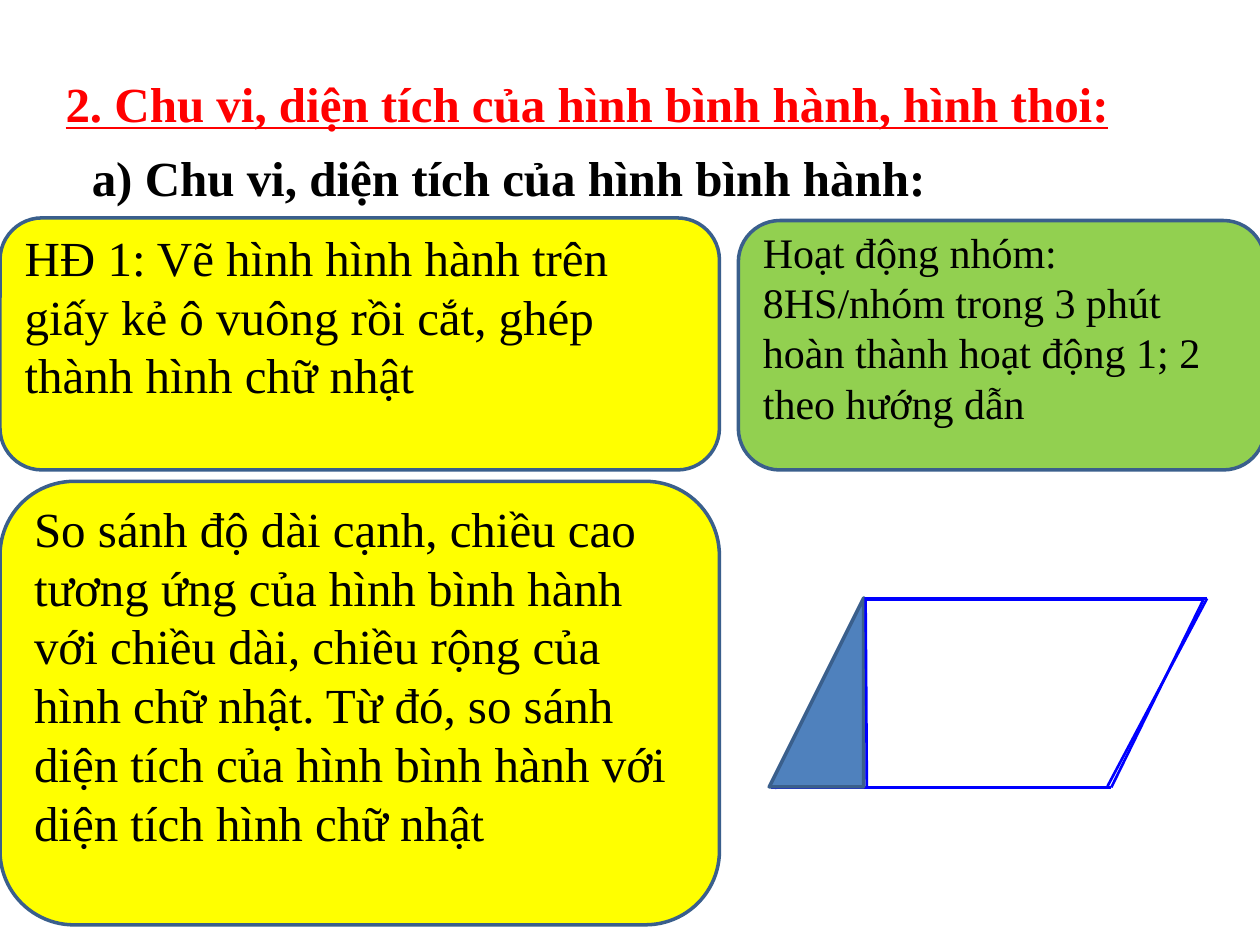
from lxml.etree import SubElement
from pptx import Presentation
from pptx.dml.color import RGBColor
from pptx.enum.shapes import MSO_CONNECTOR, MSO_SHAPE
from pptx.enum.text import MSO_ANCHOR, MSO_AUTO_SIZE, PP_ALIGN
from pptx.oxml.ns import qn
from pptx.util import Inches, Pt

COLORS = {"red": "FF0000", "black": "000000", "yellow": "FFFF00", "green": "92D050",
          "edge": "3A5F8C", "blue": "0000FF", "fill": "4F81BD"}


class Board:
    """Holds the style and the current slide, and adds each kind of element."""

    font = "Times New Roman"

    def __init__(self, deck):
        self.slide = deck.slides.add_slide(deck.slide_layouts[5])

    def color(self, name):
        return RGBColor.from_string(COLORS[name])

    def text(self, frame, words, size, color, align, bold=False, line=None):
        frame.word_wrap = True
        frame.auto_size = MSO_AUTO_SIZE.NONE
        para = frame.paragraphs[0]
        para.alignment = align
        if line:
            para.line_spacing = line
        run = para.add_run()
        run.text = words
        run.font.name = self.font
        run.font.size = Pt(size)
        run.font.bold = bold
        run.font.color.rgb = self.color(color)
        return run

    def head(self, shape, words, color):
        frame = shape.text_frame
        frame.vertical_anchor = MSO_ANCHOR.TOP
        frame.margin_top = Inches(0.11)
        return self.text(frame, words, 28, color, PP_ALIGN.JUSTIFY, True, 1.5)

    def title(self, words, left, top, width, height):
        shape = self.slide.shapes.title
        shape.left, shape.top = Inches(left), Inches(top)
        shape.width, shape.height = Inches(width), Inches(height)
        self.head(shape, words, "red").font.underline = True

    def label(self, words, *place):
        box = self.slide.shapes.add_textbox(*map(Inches, place))
        self.head(box, words, "black")

    def shape(self, kind, fill, *place):
        shape = self.slide.shapes.add_shape(kind, *map(Inches, place))
        shape.shadow.inherit = False
        shape.fill.solid()
        shape.fill.fore_color.rgb = self.color(fill)
        shape.line.color.rgb = self.color("edge")
        shape.line.width = Pt(2)
        return shape

    def card(self, words, size, fill, base, *place):
        frame = self.shape(MSO_SHAPE.ROUNDED_RECTANGLE, fill, *place).text_frame
        frame.vertical_anchor = MSO_ANCHOR.MIDDLE
        frame.margin_bottom = Inches(base)
        self.text(frame, words, size, "black", PP_ALIGN.LEFT)

    def outline(self, *sides):
        group = self.slide.shapes.add_group_shape()
        for side in sides:
            line = group.shapes.add_connector(MSO_CONNECTOR.STRAIGHT, *map(Inches, side))
            line.line.color.rgb = self.color("blue")
            line.line.width = Pt(1.5)
            SubElement(line._element.spPr, qn("a:effectLst"))


def main():
    deck = Presentation()
    deck.slide_width, deck.slide_height = Inches(10), Inches(7.5)
    board = Board(deck)
    board.title("2. Chu vi, diện tích của hình bình hành, hình thoi:", 0.42, 0.24, 8.92, 0.81)
    board.label("a) Chu vi, diện tích của hình bình hành:", 0.63, 0.83, 8.92, 0.72)
    board.card("HĐ 1: Vẽ hình hình hành trên giấy kẻ ô vuông rồi cắt, ghép thành hình chữ nhật",
               28, "yellow", 0.5, 0, 1.73, 5.71, 2)
    board.card("So sánh độ dài cạnh, chiều cao tương ứng của hình bình hành với chiều dài, "
               "chiều rộng của hình chữ nhật. Từ đó, so sánh diện tích của hình bình hành "
               "với diện tích hình chữ nhật",
               28, "yellow", 0.5, 0, 3.82, 5.71, 3.52)
    board.card("Hoạt động nhóm: 8HS/nhóm trong 3 phút hoàn thành hoạt động 1; 2 theo hướng dẫn",
               24, "green", 0.34, 5.86, 1.75, 4.18, 1.98)
    board.outline((6.88, 4.75, 9.58, 4.75), (6.12, 6.25, 8.79, 6.25),
                  (9.58, 4.75, 8.79, 6.24), (6.87, 4.75, 6.15, 6.26))
    board.shape(MSO_SHAPE.RIGHT_TRIANGLE, "fill", 5.73, 5.12, 1.5, 0.75).rotation = 270
    board.outline((6.88, 4.76, 9.55, 4.76), (6.88, 6.25, 8.82, 6.25),
                  (9.55, 4.76, 8.82, 6.25), (6.87, 4.74, 6.88, 6.25))
    deck.save("out.pptx")


if __name__ == "__main__":
    main()
